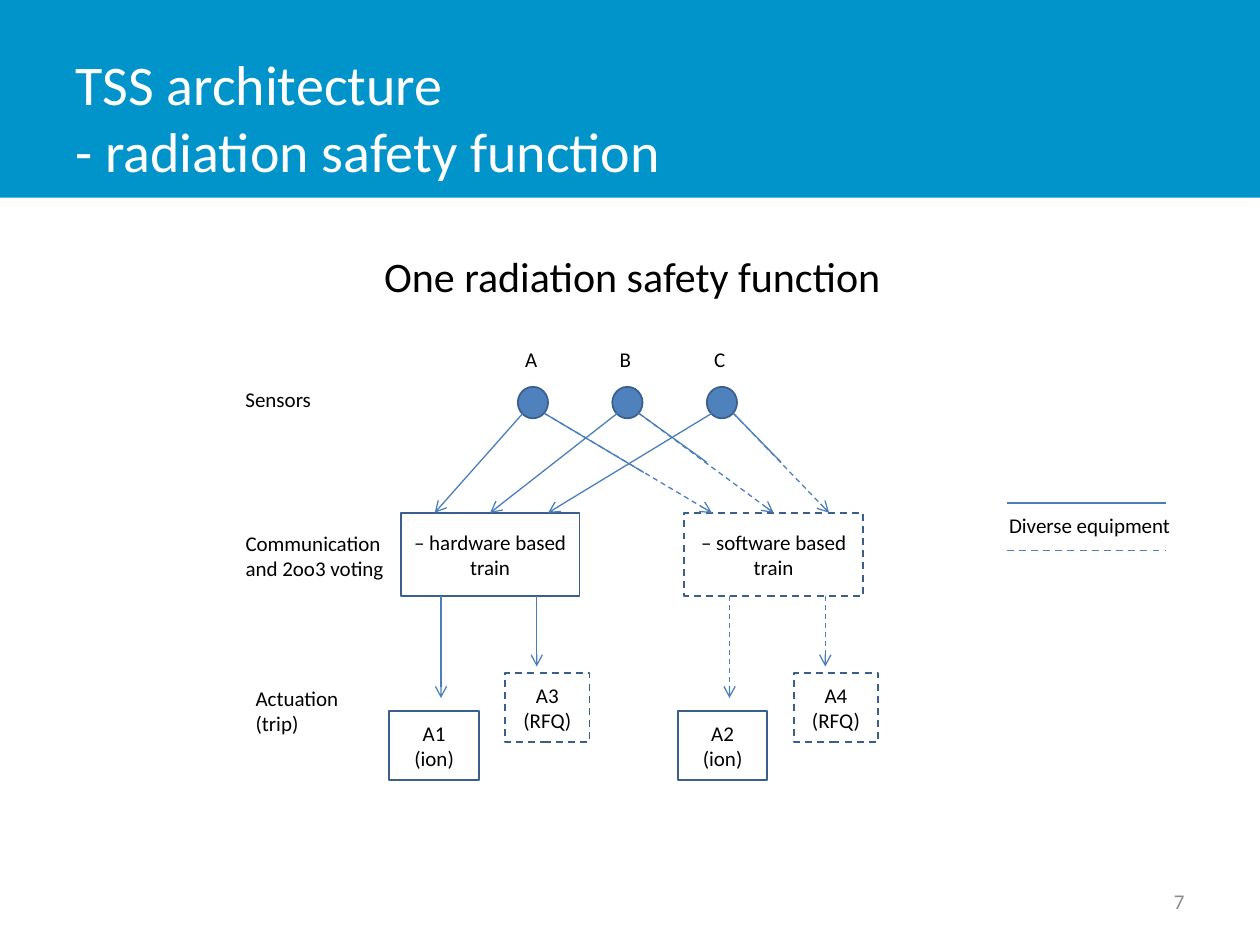
from pptx import Presentation
from pptx.dml.color import RGBColor
from pptx.enum.dml import MSO_LINE
from pptx.enum.shapes import MSO_CONNECTOR, MSO_SHAPE
from pptx.enum.text import MSO_ANCHOR as ANCHOR, PP_ALIGN as ALIGN
from pptx.oxml.ns import qn
from pptx.util import Inches, Pt
from lxml.etree import SubElement

COLUMNS, ROWS = 100, 75


def color(value):
    """Turn a hex string into a colour."""
    return RGBColor.from_string(value)


class Diagram:
    """Hold the style and the current slide, measured in grid columns and rows."""

    font = "Calibri"
    black, white, gray = "000000", "FFFFFF", "8C8C8C"
    banner, sensor, outline, wire = "0094CA", "4F81BD", "3A5F8C", "4B7EBC"

    def __init__(self, presentation):
        """Add a blank slide and work out the grid."""
        self.slide = presentation.slides.add_slide(presentation.slide_layouts[6])
        self.column = presentation.slide_width / COLUMNS
        self.row = presentation.slide_height / ROWS

    def place(self, *lengths):
        """Turn alternating columns and rows into slide lengths."""
        units = (self.column, self.row) * 2
        return [round(length * unit) for length, unit in zip(lengths, units)]

    def set_text(self, shape, text, size, ink, align, anchor, leading=None):
        """Fill a shape with styled text."""
        frame = shape.text_frame
        frame.word_wrap = True
        frame.vertical_anchor = anchor
        frame.text = text
        for paragraph in frame.paragraphs:
            paragraph.alignment = align
            if leading:
                paragraph.line_spacing = Pt(leading)
            for run in paragraph.runs:
                run.font.name = self.font
                run.font.size = Pt(size)
                run.font.color.rgb = color(ink)

    def text(self, area, text, size=12, ink=black, align=ALIGN.LEFT, anchor=ANCHOR.TOP, leading=None):
        """Add a text box."""
        box = self.slide.shapes.add_textbox(*self.place(*area))
        self.set_text(box, text, size, ink, align, anchor, leading)

    def label(self, area, text):
        """Add a diagram label with fixed line spacing."""
        self.text(area, text, leading=14)

    def stroke(self, line, ink, width, dashed):
        """Style an outline or a connector."""
        line.color.rgb = color(ink)
        line.width = Pt(width)
        if dashed:
            line.dash_style = MSO_LINE.DASH

    def shape(self, kind, area, fill=None, outline=None, dashed=False):
        """Add a flat preset shape."""
        shape = self.slide.shapes.add_shape(kind, *self.place(*area))
        shape.shadow.inherit = False
        if fill:
            shape.fill.solid()
            shape.fill.fore_color.rgb = color(fill)
        else:
            shape.fill.background()
        if outline:
            self.stroke(shape.line, outline, 1, dashed)
        else:
            shape.line.fill.background()
        return shape

    def box(self, area, text, dashed=False):
        """Add an outlined box with centred text."""
        box = self.shape(MSO_SHAPE.RECTANGLE, area, outline=self.outline, dashed=dashed)
        self.set_text(box, text, 12, self.black, ALIGN.CENTER, ANCHOR.MIDDLE)
        return box

    def line(self, start, end, dashed=False, width=0.75, arrow=False):
        """Add a straight connector, with an open arrowhead if asked."""
        line = self.slide.shapes.add_connector(MSO_CONNECTOR.STRAIGHT, *self.place(*start, *end))
        self.stroke(line.line, self.wire, width, dashed)
        properties = line._element.spPr
        if arrow:
            SubElement(properties.find(qn("a:ln")), qn("a:tailEnd"), type="arrow")
        SubElement(properties, qn("a:effectLst"))
        return line


def build():
    """Build the slide and save it."""
    presentation = Presentation()
    presentation.slide_width, presentation.slide_height = Inches(10), Inches(7.5)
    diagram = Diagram(presentation)

    diagram.shape(MSO_SHAPE.RECTANGLE, (0, 0, COLUMNS, 15.7), fill=diagram.banner)
    diagram.text((5, 3, 78.1, 12.5), "TSS architecture\v- radiation safety function",
                 32, diagram.white, anchor=ANCHOR.MIDDLE)
    diagram.text((71.7, 69.5, 23.3, 4), "7", 12, diagram.gray, ALIGN.RIGHT, ANCHOR.MIDDLE)
    diagram.text((29.5, 19.4, 43.2, 5), "One radiation safety function", 24)

    for area, name in (((18.5, 30.2, 11.6, 4.1), "Sensors"),
                       ((18.5, 41.7, 14.1, 7.6), "Communication and 2oo3 voting"),
                       ((19.3, 54, 13.5, 5.2), "Actuation\v(trip)")):
        diagram.label(area, name)

    hardware = diagram.box((31.8, 40.7, 14.2, 6.6), "– hardware based train")
    software = diagram.box((54.3, 40.7, 14.2, 6.6), "– software based train", dashed=True)

    sensors = (("A", 34.5, 56.5, (51.1, 37.5)),
               ("B", 38.9, 61.4, (56.1, 36.7)),
               ("C", 43.5, 65.8, (62, 36.7)))
    for index, (name, hardware_end, software_end, solid_end) in enumerate(sensors):
        left = 41.1 + 7.5 * index
        diagram.label((left - 0.4, 27.1, 3.4, 3.1), name)
        diagram.shape(MSO_SHAPE.OVAL, (left, 30.7, 2.4, 2.5), diagram.sensor, diagram.outline)
        right_start = (left + 2.1, 32.8)
        to_hardware = diagram.line((left + 0.4, 32.8), (hardware_end, 40.7), arrow=True)
        to_software = diagram.line(right_start, (software_end, 40.7), dashed=True, arrow=True)
        diagram.line(right_start, solid_end)
        if name == "B":
            to_hardware.end_connect(hardware, 0)
            to_software.end_connect(software, 0)

    for offset, dashed, ion, rfq in ((0, False, "A1", "A3"), (22.9, True, "A2", "A4")):
        diagram.line((35 + offset, 47.3), (35 + offset, 55.4), dashed, arrow=True)
        diagram.line((42.6 + offset, 47.3), (42.6 + offset, 52.9), dashed, arrow=True)
        diagram.box((30.9 + offset, 56.4, 7.1, 5.5), f"{ion}\v(ion)")
        diagram.box((40.1 + offset, 53.4, 6.7, 5.5), f"{rfq}\v(RFQ)", dashed=True)

    for row, dashed in ((39.9, False), (43.7, True)):
        diagram.line((79.9, row), (92.5, row), dashed, width=1)
    diagram.text((79.1, 40.2, 18.9, 3), "Diverse equipment")

    presentation.save("out.pptx")


if __name__ == "__main__":
    build()
